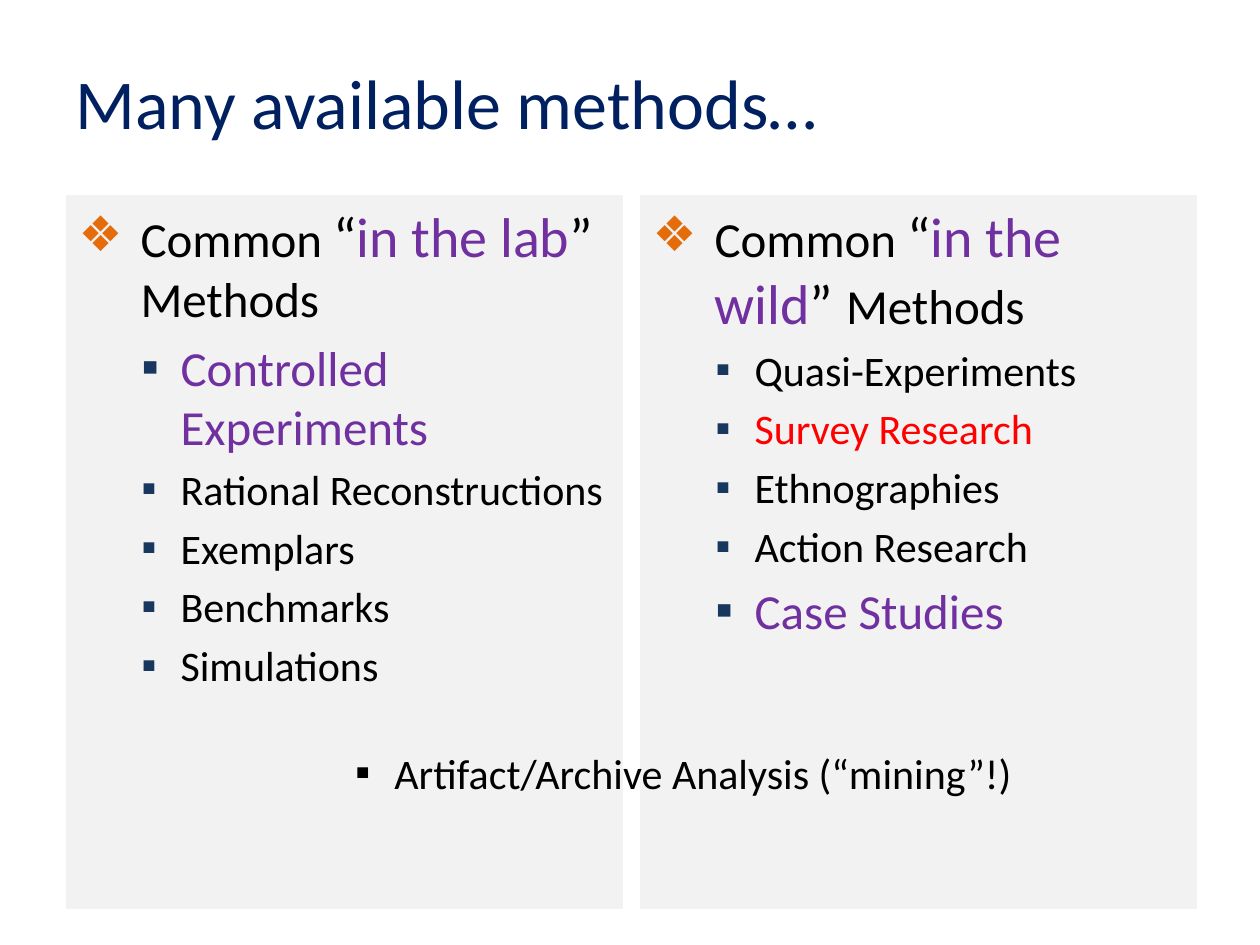
"""Build the slide that sets lab methods beside field methods."""
from dataclasses import dataclass

import lxml.etree
import pptx
import pptx.dml.color
import pptx.enum.text
import pptx.oxml.ns
import pptx.util


@dataclass(frozen=True)
class Theme:
    font: str = "Calibri"
    title: str = "002060"
    panel: str = "F2F2F2"
    text: str = "000000"
    accent: str = "7030A0"
    alert: str = "FF0000"
    diamond: str = "E46C0A"
    square: str = "17375E"
    title_size: int = 40
    quote_size: int = 32
    large_size: int = 28
    body_size: int = 24


theme = Theme()
PX = pptx.util.Inches(1) / 126


def add_span(para, text, *, size=theme.body_size, color=theme.text):
    span = para.add_run()
    span.text = text
    span.font.name = theme.font
    span.font.size = pptx.util.Pt(size)
    span.font.color.rgb = pptx.dml.color.RGBColor.from_string(color)


def set_bullet(para, symbol, *, color, margin, hang, space=0):
    qn = pptx.oxml.ns.qn
    props = para._p.get_or_add_pPr()
    props.set("marL", str(round(margin * PX)))
    props.set("indent", str(round(-hang * PX)))
    before = lxml.etree.SubElement(props, qn("a:spcBef"))
    lxml.etree.SubElement(before, qn("a:spcPct"), val=str(space * 1000))
    tint = lxml.etree.SubElement(props, qn("a:buClr"))
    lxml.etree.SubElement(tint, qn("a:srgbClr"), val=color)
    lxml.etree.SubElement(props, qn("a:buFont"), typeface=theme.font)
    lxml.etree.SubElement(props, qn("a:buChar"), char=symbol)


deck = pptx.Presentation()
deck.slide_width = round(1260 * PX)
deck.slide_height = round(945 * PX)
page = deck.slides.add_slide(deck.slide_layouts.get_by_name("Two Content"))
title, left_panel, right_panel = page.placeholders
note = page.shapes.add_textbox(0, 0, 0, 0)

places = [
    (title, 63, 38, 1133, 127),
    (left_panel, 66, 195, 557, 714),
    (right_panel, 640, 195, 557, 714),
    (note, 343, 741, 688, 63),
]
for box, left, top, width, height in places:
    box.left, box.top = round(left * PX), round(top * PX)
    box.width, box.height = round(width * PX), round(height * PX)
    box.text_frame.auto_size = pptx.enum.text.MSO_AUTO_SIZE.NONE

title.text_frame.vertical_anchor = pptx.enum.text.MSO_ANCHOR.MIDDLE
heading = title.text_frame.paragraphs[0]
heading.alignment = pptx.enum.text.PP_ALIGN.LEFT
add_span(heading, "Many available methods…", size=theme.title_size, color=theme.title)

large = {"size": theme.large_size, "color": theme.accent}
columns = [
    (left_panel, "in the lab", [
        ("Controlled Experiments", large),
        ("Rational Reconstructions", {}),
        ("Exemplars", {}),
        ("Benchmarks", {}),
        ("Simulations", {}),
    ]),
    (right_panel, "in the wild", [
        ("Quasi-Experiments", {}),
        ("Survey Research", {"color": theme.alert}),
        ("Ethnographies", {}),
        ("Action Research", {}),
        ("Case Studies", large),
    ]),
]
for panel, setting, methods in columns:
    panel.fill.solid()
    panel.fill.fore_color.rgb = pptx.dml.color.RGBColor.from_string(theme.panel)
    para = panel.text_frame.paragraphs[0]
    set_bullet(para, "❖", color=theme.diamond, margin=62, hang=62)
    add_span(para, "Common ", size=theme.large_size)
    add_span(para, "“", size=theme.quote_size)
    add_span(para, setting, size=theme.quote_size, color=theme.accent)
    add_span(para, "” ", size=theme.quote_size)
    add_span(para, "Methods", size=theme.large_size)
    for method, style in methods:
        para = panel.text_frame.add_paragraph()
        para.level = 1
        set_bullet(para, "▪", color=theme.square, margin=102, hang=39, space=20)
        add_span(para, method, **style)

note.text_frame.word_wrap = False
note.text_frame.auto_size = pptx.enum.text.MSO_AUTO_SIZE.SHAPE_TO_FIT_TEXT
para = note.text_frame.paragraphs[0]
set_bullet(para, "▪", color=theme.text, margin=39, hang=39)
add_span(para, "Artifact/Archive Analysis (“mining”!)")

deck.save("out.pptx")
